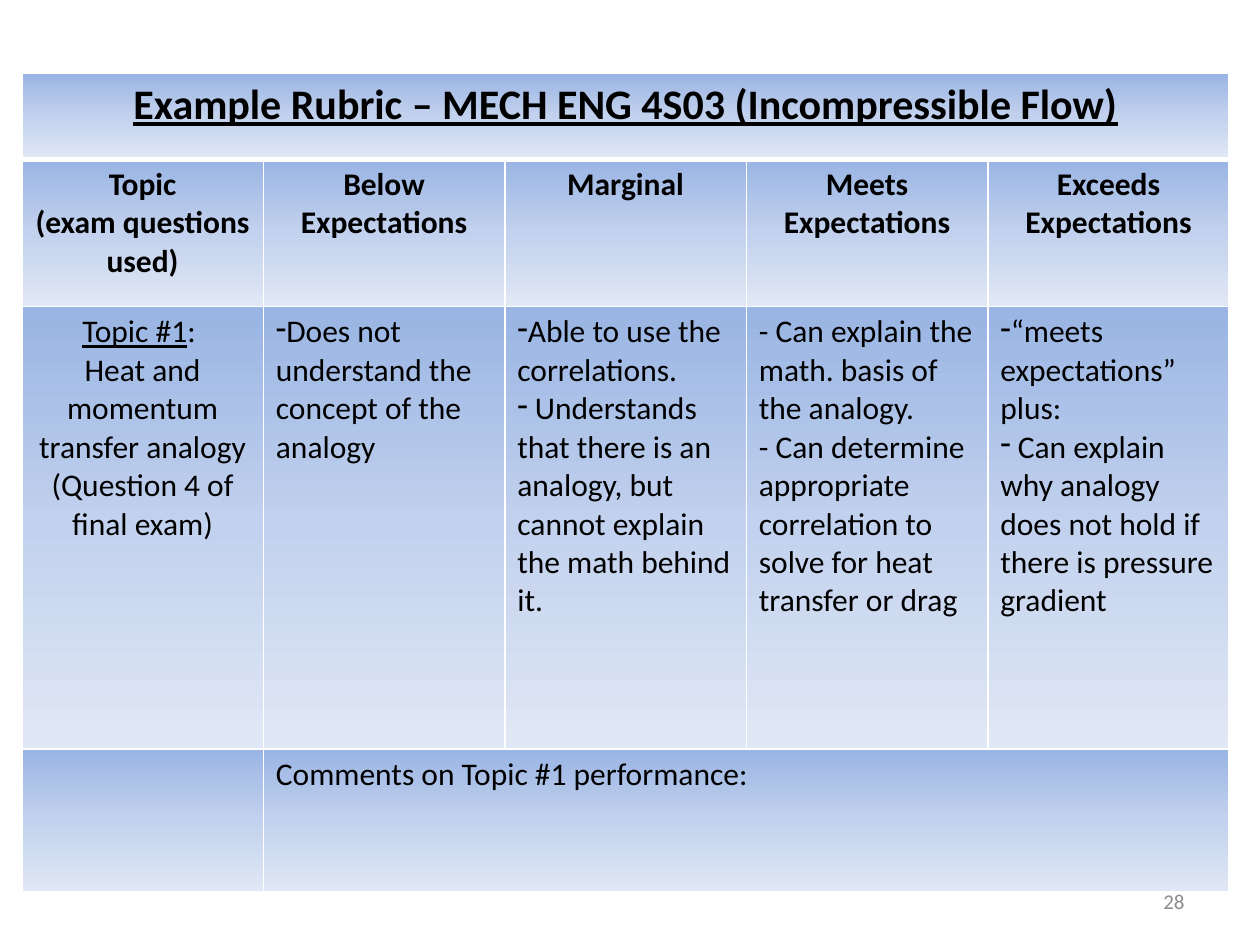
from dataclasses import dataclass

from lxml import etree
from pptx import Presentation
from pptx.dml.color import RGBColor
from pptx.enum import text
from pptx.oxml import ns
from pptx.util import Cm, Pt


@dataclass(frozen=True)
class Theme:
    font: str = "Calibri"
    ink: str = "000000"
    muted: str = "8C8C8C"
    border: str = "FFFFFF"
    gradient: tuple = ((0, "9AB5E4"), (50, "C2D1ED"), (100, "E1E8F5"))
    title_size: int = 24
    body_size: int = 18
    number_size: int = 12
    thin: int = 1
    thick: int = 3


THEME = Theme()
CENTER = text.PP_ALIGN.CENTER
LEFT = text.PP_ALIGN.LEFT
TITLE = "Example Rubric – MECH ENG 4S03 (Incompressible Flow)"
HEADINGS = [
    ["Topic", "(exam questions used)"],
    ["Below", "Expectations"],
    ["Marginal"],
    ["Meets", "Expectations"],
    ["Exceeds", "Expectations"],
]
TOPIC = ["Topic #1", "Heat and momentum transfer analogy (Question 4 of final exam)"]
LEVELS = [
    (["Does not understand the concept of the analogy"], True),
    (["Able to use the correlations.",
      " Understands that there is an analogy, but cannot explain the math behind it."], True),
    (["- Can explain the math. basis of the analogy.",
      "- Can determine appropriate correlation to solve for heat transfer or drag"], False),
    (["“meets expectations” plus:",
      " Can explain why analogy does not hold if there is pressure gradient"], True),
]
COMMENTS = "Comments on Topic #1 performance:"
ROW_HEIGHTS = (1.73, 2.97, 8.92, 2.87)


def add_node(parent, tag, **attrs):
    return etree.SubElement(parent, ns.qn(tag), attrs)


def style_run(r, size, color=THEME.ink, bold=False, underline=False):
    r.font.name = THEME.font
    r.font.size = Pt(size)
    r.font.color.rgb = RGBColor.from_string(color)
    r.font.bold = bold
    r.font.underline = underline


def style_cell(cell, top, bottom):
    tc_pr = cell._tc.get_or_add_tcPr()
    sides = {"L": THEME.thin, "R": THEME.thin, "T": top, "B": bottom}
    for side, width in sides.items():
        ln = add_node(tc_pr, f"a:ln{side}", w=str(Pt(width)))
        add_node(add_node(ln, "a:solidFill"), "a:srgbClr", val=THEME.border)
    grad = add_node(tc_pr, "a:gradFill", rotWithShape="1")
    stops = add_node(grad, "a:gsLst")
    for pos, color in THEME.gradient:
        add_node(add_node(stops, "a:gs", pos=str(pos * 1000)), "a:srgbClr", val=color)
    add_node(grad, "a:lin", ang="5400000", scaled="0")


def write_cell(cell, lines, size=THEME.body_size, align=LEFT, bold=False,
               underline=False, bullets=False):
    tf = cell.text_frame
    tf.text = "\n".join(lines)
    for p in tf.paragraphs:
        p.alignment = align
        if bullets:
            add_node(p._p.get_or_add_pPr(), "a:buChar", char="-")
        for r in p.runs:
            style_run(r, size, bold=bold, underline=underline)


def write_topic(cell):
    write_cell(cell, TOPIC, align=CENTER)
    p = cell.text_frame.paragraphs[0]
    p.runs[0].font.underline = True
    r = p.add_run()
    r.text = ": "
    style_run(r, THEME.body_size)


def add_rubric(s, left, top, width):
    rows, cols = len(ROW_HEIGHTS), len(HEADINGS)
    table = s.shapes.add_table(rows, cols, Cm(left), Cm(top), Cm(width),
                               Cm(sum(ROW_HEIGHTS))).table
    table.first_row = table.horz_banding = False
    for col in table.columns:
        col.width = Cm(width / cols)
    for i, height in enumerate(ROW_HEIGHTS):
        table.rows[i].height = Cm(height)
        for j in range(cols):
            style_cell(table.cell(i, j),
                       top=THEME.thick if i == 1 else THEME.thin,
                       bottom=THEME.thick if i == 0 else THEME.thin)

    table.cell(0, 0).merge(table.cell(0, cols - 1))
    table.cell(3, 1).merge(table.cell(3, cols - 1))
    write_cell(table.cell(0, 0), [TITLE], THEME.title_size, CENTER, bold=True, underline=True)
    for j, lines in enumerate(HEADINGS):
        write_cell(table.cell(1, j), lines, align=CENTER, bold=True)
    write_topic(table.cell(2, 0))
    for j, (lines, bullets) in enumerate(LEVELS, start=1):
        write_cell(table.cell(2, j), lines, bullets=bullets)
    write_cell(table.cell(3, 1), [COMMENTS])


def add_slide_number(s, left, top, width, height):
    tf = s.shapes.add_textbox(Cm(left), Cm(top), Cm(width), Cm(height)).text_frame
    tf.word_wrap = True
    tf.vertical_anchor = text.MSO_ANCHOR.MIDDLE
    tf.text = "28"
    p = tf.paragraphs[0]
    p.alignment = text.PP_ALIGN.RIGHT
    style_run(p.runs[0], THEME.number_size, THEME.muted)


def main():
    prs = Presentation()
    prs.slide_width, prs.slide_height = Cm(25.4), Cm(19.05)
    s = prs.slides.add_slide(prs.slide_layouts[6])
    add_slide_number(s, 18.2, 17.66, 5.93, 1.01)
    add_rubric(s, 0.44, 1.48, 24.34)
    prs.save("out.pptx")


if __name__ == "__main__":
    main()
